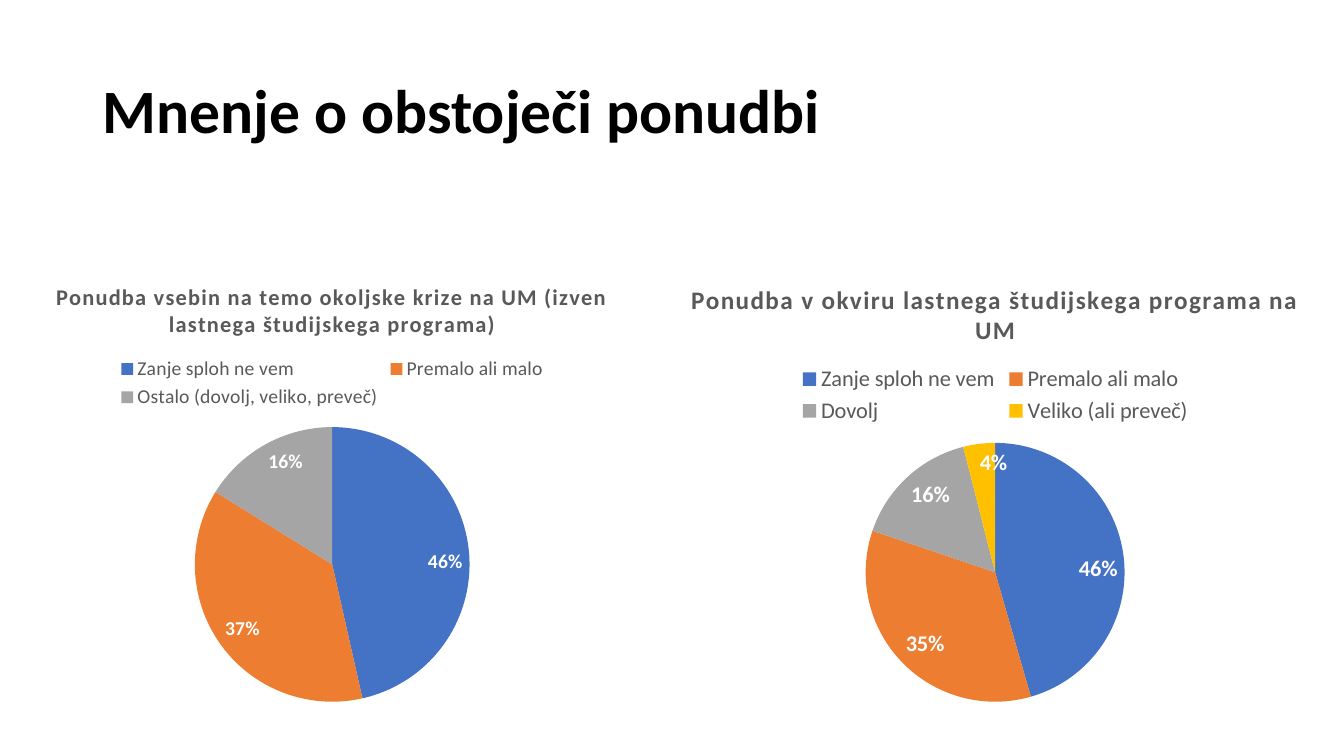
from dataclasses import dataclass

import pptx
import pptx.chart.data
import pptx.dml.color
import pptx.enum.chart
import pptx.enum.text
import pptx.util
from pptx.util import Inches


def rgb(value):
    return pptx.dml.color.RGBColor.from_string(value)


@dataclass(frozen=True)
class Theme:
    font: str = "Calibri"
    ink: str = "000000"
    muted: str = "595959"
    label: str = "FFFFFF"
    slices: tuple = ("4472C4", "ED7D31", "A5A5A5", "FFC000")
    heading_size: int = 44
    title_step: int = 2  # points by which a chart title exceeds its legend
    title_tracking: int = 100  # hundredths of a point


THEME = Theme()

OUTSIDE_PROGRAMME = {
    "Zanje sploh ne vem": 46,
    "Premalo ali malo": 37,
    "Ostalo (dovolj, veliko, preveč)": 16,
}
OWN_PROGRAMME = {
    "Zanje sploh ne vem": 46,
    "Premalo ali malo": 35,
    "Dovolj": 16,
    "Veliko (ali preveč)": 4,
}


def style(font, size, color, bold=False):
    font.name = THEME.font
    font.size = pptx.util.Pt(size)
    font.bold = bold
    font.color.rgb = rgb(color)


def set_heading(slide, text, left, top, width, height):
    heading = slide.shapes.title
    heading.left, heading.top = Inches(left), Inches(top)
    heading.width, heading.height = Inches(width), Inches(height)
    heading.text_frame.text = text
    heading.text_frame.vertical_anchor = pptx.enum.text.MSO_ANCHOR.MIDDLE
    paragraph = heading.text_frame.paragraphs[0]
    paragraph.alignment = pptx.enum.text.PP_ALIGN.LEFT
    paragraph.line_spacing = 0.9
    style(paragraph.font, THEME.heading_size, THEME.ink, bold=True)


def add_opinion_pie(slide, title, shares, size, left, top, width, height):
    """Add a titled pie; size is the type size of its legend and labels."""
    data = pptx.chart.data.CategoryChartData()
    data.categories = list(shares)
    data.add_series("Series 1", list(shares.values()))
    chart = slide.shapes.add_chart(
        pptx.enum.chart.XL_CHART_TYPE.PIE,
        Inches(left), Inches(top), Inches(width), Inches(height), data,
    ).chart
    style(chart.font, size, THEME.ink)

    chart.has_title = True
    chart.chart_title.include_in_layout = False
    chart.chart_title.text_frame.text = title
    paragraph = chart.chart_title.text_frame.paragraphs[0]
    style(paragraph.font, size + THEME.title_step, THEME.muted, bold=True)
    run = paragraph.runs[0]
    style(run.font, size + THEME.title_step, THEME.muted, bold=True)
    run._r.get_or_add_rPr().set("spc", str(THEME.title_tracking))

    chart.has_legend = True
    chart.legend.position = pptx.enum.chart.XL_LEGEND_POSITION.TOP
    chart.legend.include_in_layout = False
    style(chart.legend.font, size, THEME.muted)

    plot = chart.plots[0]
    plot.vary_by_categories = True
    for index, color in enumerate(THEME.slices[:len(shares)]):
        fill = plot.series[0].points[index].format.fill
        fill.solid()
        fill.fore_color.rgb = rgb(color)

    labels = plot.series[0].data_labels
    labels.show_value = False
    labels.show_percentage = True
    labels.number_format = "0%"
    labels.number_format_is_linked = False
    labels.position = pptx.enum.chart.XL_LABEL_POSITION.INSIDE_END
    style(labels.font, size, THEME.label, bold=True)


def main():
    deck = pptx.Presentation()
    deck.slide_width, deck.slide_height = Inches(13.33), Inches(7.5)
    slide = deck.slides.add_slide(deck.slide_layouts.get_by_name("Title Only"))

    set_heading(slide, "Mnenje o obstoječi ponudbi", 0.92, 0.4, 11.5, 1.45)
    pies_top, pies_height = 2.61, 4.49
    add_opinion_pie(
        slide,
        "Ponudba vsebin na temo okoljske krize na UM "
        "(izven lastnega študijskega programa)",
        OUTSIDE_PROGRAMME, 14, -0.18, pies_top, 6.95, pies_height,
    )
    add_opinion_pie(
        slide, "Ponudba v okviru lastnega študijskega programa na UM",
        OWN_PROGRAMME, 16, 5.94, pies_top, 7.86, pies_height,
    )
    deck.save("out.pptx")


if __name__ == "__main__":
    main()
